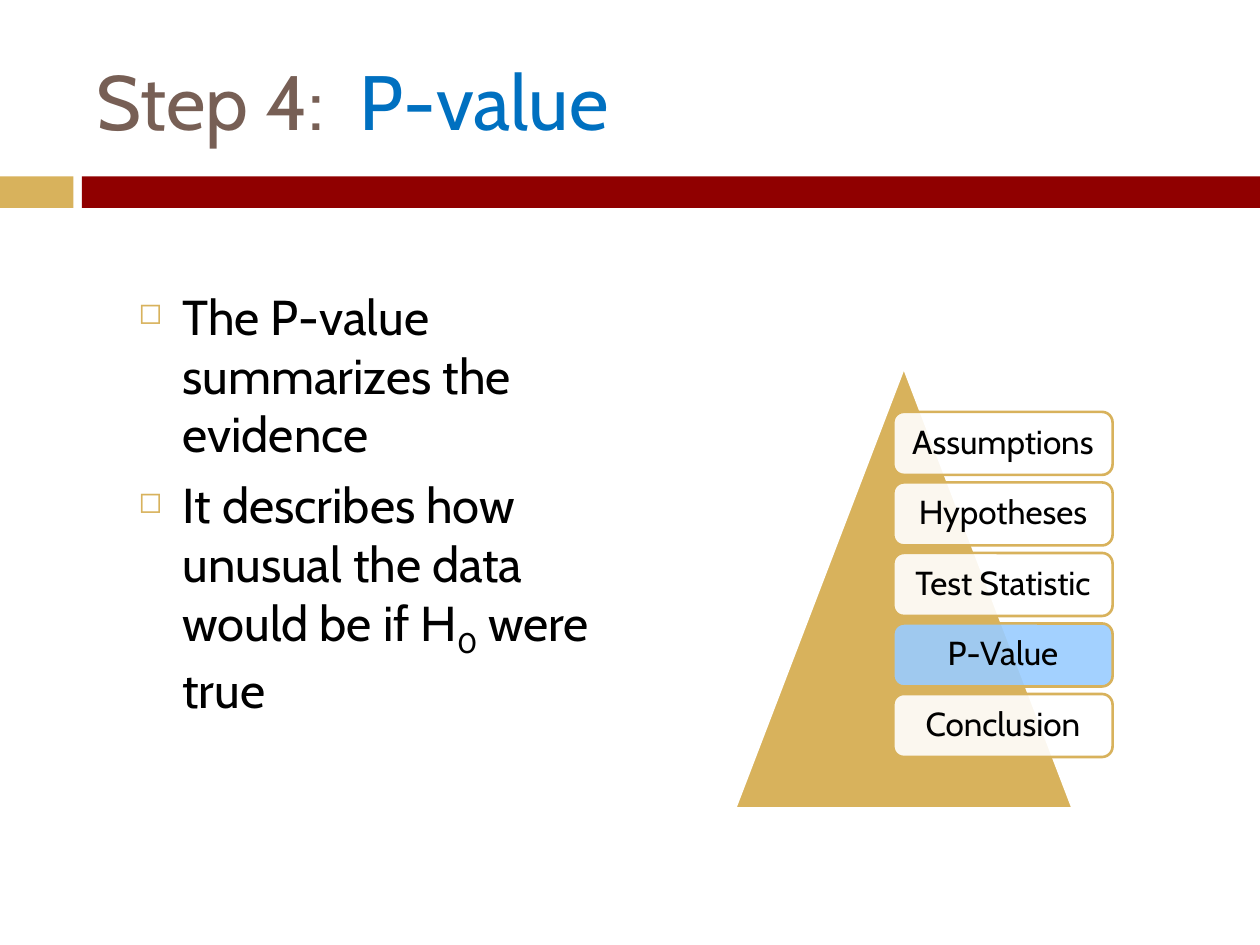
from lxml import etree
from pptx import Presentation
from pptx.dml.color import RGBColor
from pptx.enum import shapes, text
from pptx.oxml import ns
from pptx.util import Pt

GOLD = RGBColor(0xD8, 0xB2, 0x5C)
RED = RGBColor(0x90, 0x00, 0x00)
BROWN = RGBColor(0x77, 0x5F, 0x55)
BLUE = RGBColor(0x00, 0x70, 0xC0)
LIGHT_BLUE = RGBColor(0x99, 0xCC, 0xFF)
WHITE = RGBColor(0xFF, 0xFF, 0xFF)
BLACK = RGBColor(0x00, 0x00, 0x00)
FONT = "Cabin"

TITLE = [("Step 4:  ", BROWN), ("P-value", BLUE)]
POINTS = [
    [("The P-value summarizes the evidence", 0)],
    [("It describes how unusual the data would be if H", 0), ("0", -25000), (" were true", 0)],
]
STEPS = ["Assumptions", "Hypotheses", "Test Statistic", "P-Value", "Conclusion"]
CURRENT = "P-Value"
BARS = [(0, 42, GOLD), (46.8, 673.2, RED)]
STEP_TOP, STEP_PITCH = 235.4, 40.3


def add_run(p, words, size, color):
    r = p.add_run()
    r.text = words
    r.font.name, r.font.size = FONT, Pt(size)
    r.font.color.rgb = color
    return r


def add_shape(s, kind, box, fill, line=None):
    sp = s.shapes.add_shape(kind, *map(Pt, box))
    sp.shadow.inherit = False
    sp.fill.solid()
    sp.fill.fore_color.rgb = fill
    if line is None:
        sp.line.fill.background()
    else:
        sp.line.color.rgb = line
        sp.line.width = Pt(1.5)
    return sp


def add_text_box(s, box):
    tf = s.shapes.add_textbox(*map(Pt, box)).text_frame
    tf.word_wrap = True
    return tf


def add_child(parent, tag, **attrs):
    return etree.SubElement(parent, ns.qn(tag), attrs)


def set_bullet(p):
    pPr = p._p.get_or_add_pPr()
    pPr.set("marL", str(Pt(25.2)))
    pPr.set("indent", str(-Pt(25.2)))
    add_child(add_child(pPr, "a:buClr"), "a:srgbClr", val=str(GOLD))
    add_child(pPr, "a:buSzPct", val="60000")
    add_child(pPr, "a:buChar", char="◻")


def add_title(s):
    tf = add_text_box(s, (48.2, 18, 642.2, 77.8))
    tf.vertical_anchor = text.MSO_ANCHOR.MIDDLE
    for words, color in TITLE:
        add_run(tf.paragraphs[0], words, 44, color)


def add_points(s):
    tf = add_text_box(s, (72, 160, 306, 323))
    for i, runs in enumerate(POINTS):
        p = tf.add_paragraph() if i else tf.paragraphs[0]
        p.space_before = Pt(7)
        set_bullet(p)
        for words, baseline in runs:
            r = add_run(p, words, 28, BLACK)
            if baseline:
                r.font._element.set("baseline", str(baseline))


def add_step(s, i, name):
    fill = LIGHT_BLUE if name == CURRENT else WHITE
    box = (510.5, STEP_TOP + i * STEP_PITCH, 125.3, 36)
    sp = add_shape(s, shapes.MSO_SHAPE.ROUNDED_RECTANGLE, box, fill, GOLD)
    color = sp._element.spPr.find(ns.qn("a:solidFill"))[0]
    add_child(color, "a:alpha", val="90000")
    tf = sp.text_frame
    tf.word_wrap = True
    tf.vertical_anchor = text.MSO_ANCHOR.MIDDLE
    tf.margin_left = tf.margin_right = tf.margin_top = tf.margin_bottom = Pt(5.7)
    p = tf.paragraphs[0]
    p.alignment = text.PP_ALIGN.CENTER
    p.line_spacing = 0.9
    add_run(p, name, 19, BLACK)


def main():
    prs = Presentation()
    prs.slide_width, prs.slide_height = Pt(720), Pt(540)
    s = prs.slides.add_slide(prs.slide_layouts[6])
    for left, width, color in BARS:
        add_shape(s, shapes.MSO_SHAPE.RECTANGLE, (left, 100.8, width, 18), color)
    add_points(s)
    add_title(s)
    add_shape(s, shapes.MSO_SHAPE.ISOSCELES_TRIANGLE, (420, 210, 193, 252), GOLD, WHITE)
    for i, name in enumerate(STEPS):
        add_step(s, i, name)
    prs.save("out.pptx")


if __name__ == "__main__":
    main()
